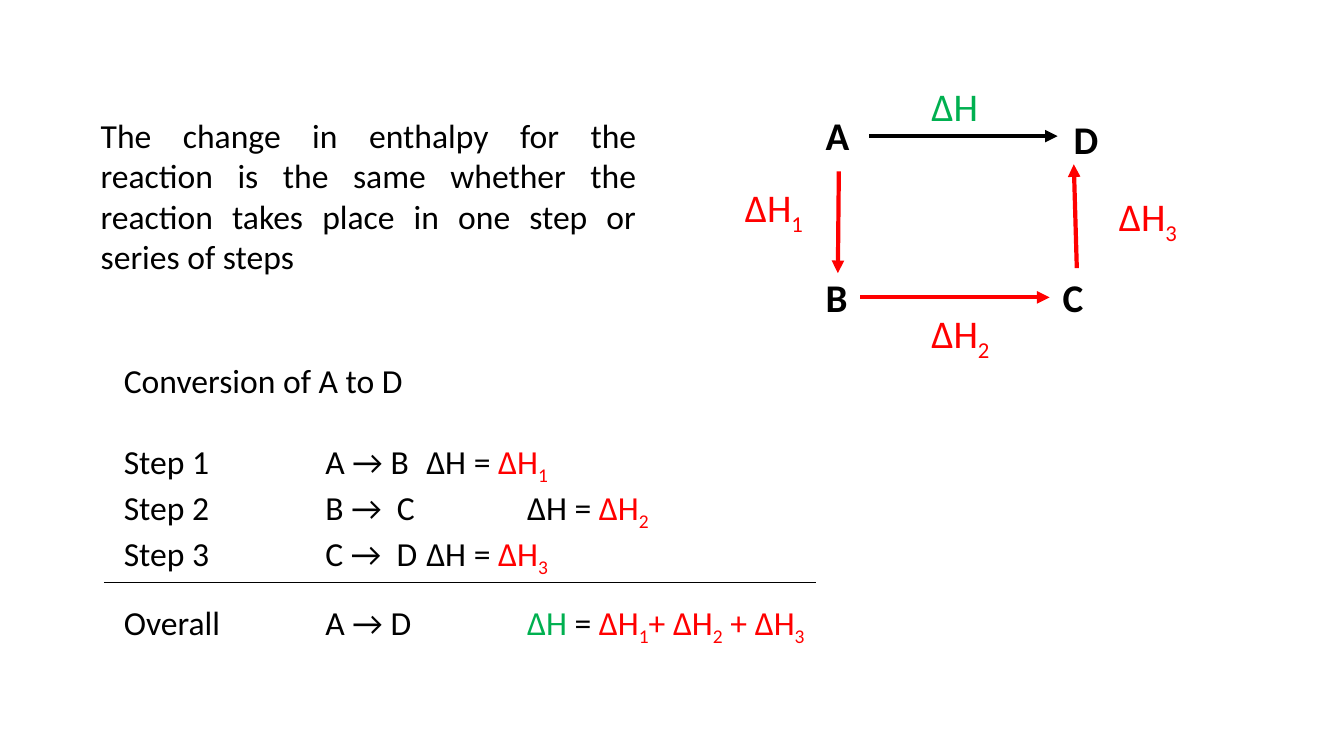
from lxml import etree
from pptx import Presentation
from pptx.dml.color import RGBColor
from pptx.enum.shapes import MSO_CONNECTOR
from pptx.enum.text import MSO_AUTO_SIZE, PP_ALIGN
from pptx.oxml.ns import qn
from pptx.util import Inches, Pt

BLACK, RED, GREEN = "000000", "FF0000", "00B050"


def color(hex_value):
    return RGBColor.from_string(hex_value)


def add_span(para, text, size, hex_value=BLACK, bold=False, subscript=False):
    span = para.add_run()
    span.text = text
    span.font.name = "Calibri"
    span.font.size = Pt(size)
    span.font.bold = bold
    span.font.color.rgb = color(hex_value)
    if subscript:
        span.font._element.set("baseline", "-25000")


def add_enthalpy(para, size, step, lead=""):
    """Red enthalpy symbol with its step number as a subscript."""
    add_span(para, lead + "∆H", size, RED)
    add_span(para, step, size, RED, subscript=True)


def set_tabs(para, *stops):
    """Set left tab stops, in inches from the text edge."""
    tabs = etree.SubElement(para._p.get_or_add_pPr(), qn("a:tabLst"))
    for stop in stops:
        etree.SubElement(tabs, qn("a:tab"), pos=str(Inches(stop)), algn="l")


def add_box(page, left, top, width, height, wrap=False):
    """Add a text box and return its text frame."""
    box = page.shapes.add_textbox(Inches(left), Inches(top), Inches(width), Inches(height))
    frame = box.text_frame
    frame.word_wrap = wrap
    frame.auto_size = MSO_AUTO_SIZE.SHAPE_TO_FIT_TEXT
    return frame


def add_line(page, start, end, hex_value, weight, arrow=False):
    line = page.shapes.add_connector(
        MSO_CONNECTOR.STRAIGHT, *(Inches(value) for value in start + end))
    line.line.color.rgb = color(hex_value)
    line.line.width = Pt(weight)
    if arrow:
        etree.SubElement(line.line._get_or_add_ln(), qn("a:tailEnd"), type="triangle")
    etree.SubElement(line._element.spPr, qn("a:effectLst"))


def add_cycle(page):
    # Arrows between the four substances
    for start, end, hex_value in (
        ((8.62, 1.35), (10.49, 1.35), BLACK),
        ((8.53, 2.95), (10.41, 2.95), RED),
        ((8.32, 1.7), (8.31, 2.71), RED),
        ((10.68, 2.66), (10.65, 1.63), RED),
    ):
        add_line(page, start, end, hex_value, 3, arrow=True)

    # Substances at the corners
    for name, left, top, width in (
        ("A", 8.09, 1.06, 0.44), ("D", 10.55, 1.09, 0.45),
        ("C", 10.44, 2.66, 0.41), ("B", 8.09, 2.66, 0.42),
    ):
        frame = add_box(page, left, top, width, 0.57)
        add_span(frame.paragraphs[0], name, 28, bold=True)

    # Enthalpy labels beside the arrows
    direct = add_box(page, 9.14, 0.77, 0.67, 0.57)
    add_span(direct.paragraphs[0], "∆H", 28, GREEN)
    for step, left, top in (("1", 7.29, 1.77), ("2", 9.14, 3.02), ("3", 11, 1.86)):
        frame = add_box(page, left, top, 0.8, 0.57)
        add_enthalpy(frame.paragraphs[0], 28, step)


def add_statement(page):
    para = add_box(page, 0.9, 1.09, 5.51, 1.72, wrap=True).paragraphs[0]
    para.alignment = PP_ALIGN.JUSTIFY
    add_span(para, "The change in enthalpy for the reaction is the same whether "
                   "the reaction takes place in one step or series of steps", 24)


def add_steps(page):
    # Heading and the three steps
    frame = add_box(page, 1.13, 3.52, 5.47, 2.12)
    heading = frame.paragraphs[0]
    heading.space_after = Pt(29)
    add_span(heading, "Conversion of A to D", 24)
    for step, reaction, stop in (("1", "A → B", 3), ("2", "B →  C", 4), ("3", "C →  D", 3)):
        para = frame.add_paragraph()
        set_tabs(para, 2, stop)
        add_span(para, f"Step {step}\t{reaction}\t∆H = ", 24)
        add_enthalpy(para, 24, step)

    # Sum of the steps below the rule
    add_line(page, (1.03, 5.78), (8.09, 5.78), BLACK, 0.75)
    total = add_box(page, 1.13, 5.92, 7.06, 0.5).paragraphs[0]
    set_tabs(total, 2, 4)
    add_span(total, "Overall\tA → D\t", 24)
    add_span(total, "∆H", 24, GREEN)
    add_span(total, " = ", 24)
    for step, lead in (("1", ""), ("2", "+ "), ("3", " + ")):
        add_enthalpy(total, 24, step, lead)


def main():
    deck = Presentation()
    deck.slide_width, deck.slide_height = Inches(13.33), Inches(7.5)
    page = deck.slides.add_slide(deck.slide_layouts[6])
    add_cycle(page)
    add_statement(page)
    add_steps(page)
    deck.save("out.pptx")


if __name__ == "__main__":
    main()
